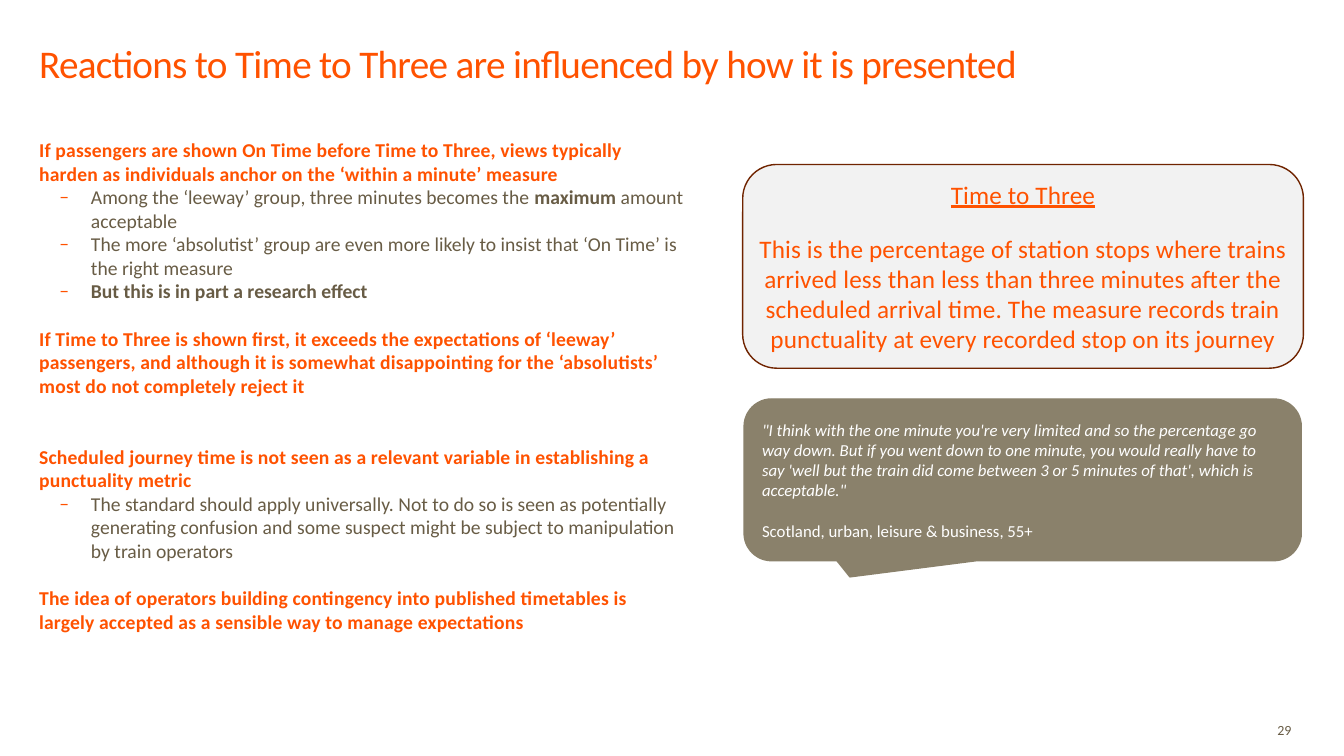
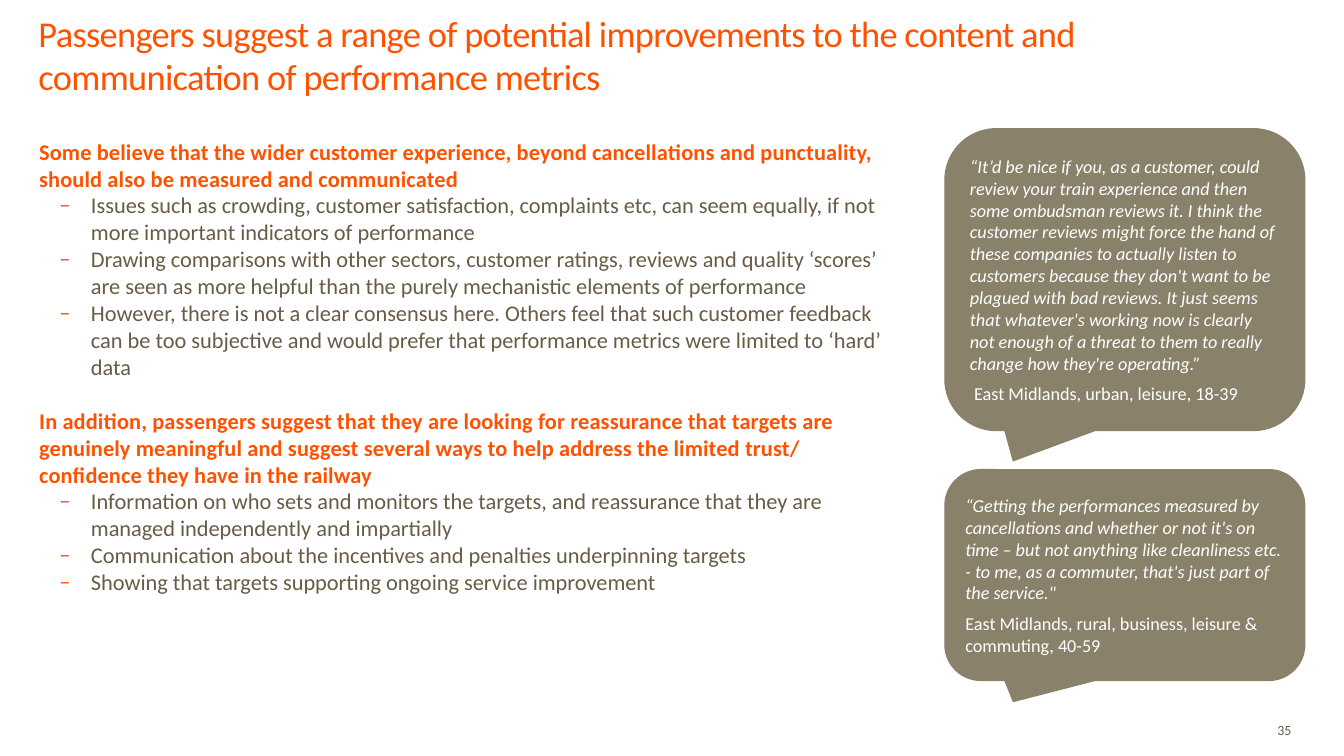
from pptx import Presentation
from pptx.dml.color import RGBColor
from pptx.enum.shapes import MSO_SHAPE
from pptx.enum.text import MSO_ANCHOR, MSO_AUTO_SIZE, PP_ALIGN
from pptx.oxml.ns import qn
from pptx.util import Pt
from lxml import etree

# Shared colours, enum members and text formats
ORANGE = RGBColor(0xFF, 0x52, 0x00)
BROWN = RGBColor(0x68, 0x5C, 0x45)
RUST = RGBColor(0x70, 0x24, 0x00)
OLIVE = RGBColor(0x8A, 0x81, 0x6B)
PALE = RGBColor(0xF2, 0xF2, 0xF2)
WHITE = RGBColor(0xFF, 0xFF, 0xFF)

ROUND = MSO_SHAPE.ROUNDED_RECTANGLE
BUBBLE = MSO_SHAPE.ROUNDED_RECTANGULAR_CALLOUT
LEFT, CENTER, RIGHT = PP_ALIGN.LEFT, PP_ALIGN.CENTER, PP_ALIGN.RIGHT
TOP, MIDDLE, BOTTOM = MSO_ANCHOR.TOP, MSO_ANCHOR.MIDDLE, MSO_ANCHOR.BOTTOM
FIXED = MSO_AUTO_SIZE.NONE

FACE = "Calibri"
TITLE = {"color": ORANGE, "spc": -50}
HEAD = {"color": ORANGE, "bold": True, "spc": 10}
ITEM = {"color": BROWN}
STRONG = {"color": BROWN, "bold": True}
PAGE = {"color": BROWN, "size": Pt(10)}
NOTE = {"color": ORANGE, "size": Pt(18), "spc": 10}
QUOTE = {"color": WHITE, "italic": True}
SOURCE = {"color": WHITE}
TAIL = (-0.31, 0.6, 0.17)


def set_frame(frame, anchor, side=0, edge=0):
    values = {"word_wrap": True, "auto_size": FIXED, "vertical_anchor": anchor,
              "margin_left": Pt(side), "margin_right": Pt(side),
              "margin_top": Pt(edge), "margin_bottom": Pt(edge)}
    for name, value in values.items():
        setattr(frame, name, value)


def add_run(para, text, style, **more):
    run = para.add_run()
    run.text = text
    values = {"name": FACE, **style, **more}
    run.font.color.rgb = values.pop("color")
    spacing = values.pop("spc", 0)
    if spacing:
        run.font._element.set("spc", str(spacing))
    for name, value in values.items():
        setattr(run.font, name, value)


def next_para(frame, first, align=LEFT, gap=0):
    para = frame.paragraphs[0] if first else frame.add_paragraph()
    para.alignment = align
    if gap:
        para.space_before = Pt(gap)
    return para


def indent(para, left, hang=0):
    props = para._p.get_or_add_pPr()
    props.set("marL", str(Pt(left)))
    props.set("indent", str(Pt(hang)))
    return props


def add_dash(para):
    props = indent(para, 37, -22.5)
    color = etree.SubElement(props, qn("a:buClr"))
    etree.SubElement(color, qn("a:srgbClr")).set("val", str(ORANGE))
    etree.SubElement(props, qn("a:buFont")).set("typeface", FACE)
    etree.SubElement(props, qn("a:buChar")).set("char", "–")


# Title and page number, shared by both slides
def new_slide(deck, title, box, size, page, pitch=None):
    slide = deck.slides.add_slide(deck.slide_layouts[5])
    head = slide.shapes.title
    head.left, head.top, head.width, head.height = map(Pt, box)
    set_frame(head.text_frame, BOTTOM)
    para = next_para(head.text_frame, True)
    if pitch:
        para.line_spacing = Pt(pitch)
    add_run(para, title, TITLE, size=Pt(size))

    mark = slide.shapes.add_textbox(*map(Pt, (905, 513.5, 17.5, 16)))
    set_frame(mark.text_frame, MIDDLE)
    add_run(next_para(mark.text_frame, True, RIGHT), page, PAGE)
    return slide


# Left column: sections of a gap, a heading and dashed points
def add_body(slide, box, size, parts):
    frame = slide.shapes.add_textbox(*map(Pt, box)).text_frame
    set_frame(frame, TOP)
    for num, (gap, head, points) in enumerate(parts):
        para = next_para(frame, num == 0, gap=gap)
        add_run(para, head, HEAD, size=Pt(size))
        for runs in points:
            para = next_para(frame, False)
            add_dash(para)
            for text, style in runs:
                add_run(para, text, style, size=Pt(size))


def add_panel(slide, kind, box, fill, edge):
    shape = slide.shapes.add_shape(kind, *map(Pt, box))
    shape.shadow.inherit = False
    shape.fill.solid()
    shape.fill.fore_color.rgb = fill
    shape.line.color.rgb = edge
    shape.line.width = Pt(1)
    return shape


# Definition card
def add_card(slide, box, head, text):
    frame = add_panel(slide, ROUND, box, PALE, RUST).text_frame
    set_frame(frame, MIDDLE)
    add_run(next_para(frame, True, CENTER), head, NOTE, underline=True)
    add_run(next_para(frame, False, CENTER, 17), text, NOTE)


# Speech bubble with a quote and its speaker
def add_quote(slide, box, size, gap, quote, source, shift=0):
    shape = add_panel(slide, BUBBLE, box, OLIVE, OLIVE)
    for num, value in enumerate(TAIL):
        shape.adjustments[num] = value
    frame = shape.text_frame
    set_frame(frame, MIDDLE, 7.2, 3.6)
    add_run(next_para(frame, True), quote, QUOTE, size=Pt(size))
    para = next_para(frame, False, gap=gap)
    indent(para, shift)
    add_run(para, source, SOURCE, size=Pt(size))


def add_timing(deck):
    slide = new_slide(
        deck, "Reactions to Time to Three are influenced by how it is presented",
        (28, 27.5, 903, 34), 28, "29", 29)
    add_body(slide, (28, 98.5, 462, 392), 14, [
        (0, "If passengers are shown On Time before Time to Three, views typically "
            "harden as individuals anchor on the ‘within a minute’ measure", [
                [("Among the ‘leeway’ group, three minutes becomes the ", ITEM),
                 ("maximum", STRONG), (" amount acceptable", ITEM)],
                [("The more ‘absolutist’ group are even more likely to insist that "
                  "‘On Time’ is the right measure", ITEM)],
                [("But this is in part a research effect", STRONG)]]),
        (17, "If Time to Three is shown first, it exceeds the expectations of "
             "‘leeway’ passengers, and although it is somewhat disappointing for "
             "the ‘absolutists’ most do not completely reject it", []),
        (34, "Scheduled journey time is not seen as a relevant variable in "
             "establishing a punctuality metric", [
                 [("The standard should apply universally. Not to do so is seen as "
                   "potentially generating confusion and some suspect might be "
                   "subject to manipulation by train operators", ITEM)]]),
        (17, "The idea of operators building contingency into published timetables "
             "is largely accepted as a sensible way to manage expectations", [])])
    add_card(slide, (530.5, 117.5, 400.5, 145.5), "Time to Three",
             "This is the percentage of station stops where trains arrived less "
             "than less than three minutes after the scheduled arrival time. The "
             "measure records train punctuality at every recorded stop on its "
             "journey")
    add_quote(slide, (531.5, 285, 398, 115.5), 12, 14.5,
              "\"I think with the one minute you're very limited and so the "
              "percentage go way down. But if you went down to one minute, you "
              "would really have to say 'well but the train did come between 3 or "
              "5 minutes of that', which is acceptable.\"",
              "Scotland, urban, leisure & business, 55+")


def add_ideas(deck):
    slide = new_slide(
        deck, "Passengers suggest a range of potential improvements to the content "
        "and communication of performance metrics",
        (27.5, 28, 894, 42), 26, "35")
    add_body(slide, (28, 98.5, 609, 332), 16, [
        (0, "Some believe that the wider customer experience, beyond cancellations "
            "and punctuality, should also be measured and communicated", [
                [("Issues such as crowding, customer satisfaction, complaints etc, "
                  "can seem equally, if not more important indicators of "
                  "performance", ITEM)],
                [("Drawing comparisons with other sectors, customer ratings, "
                  "reviews and quality ‘scores’ are seen as more helpful than the "
                  "purely mechanistic elements of performance", ITEM)],
                [("However, there is not a clear consensus here. Others feel that "
                  "such customer feedback can be too subjective and would prefer "
                  "that performance metrics were limited to ‘hard’ data", ITEM)]]),
        (19.5, "In addition, passengers suggest that they are looking for "
               "reassurance that targets are genuinely meaningful and suggest "
               "several ways to help address the limited trust/ confidence they "
               "have in the railway", [
                   [("Information on who sets and monitors the targets, and "
                     "reassurance that they are managed independently and "
                     "impartially", ITEM)],
                   [("Communication about the incentives and penalties "
                     "underpinning targets", ITEM)],
                   [("Showing that targets supporting ongoing service "
                     "improvement", ITEM)]])])
    add_quote(slide, (675, 92, 257, 215.5), 13, 6,
              "“It’d be nice if you, as a customer, could review your train "
              "experience and then some ombudsman reviews it. I think the customer "
              "reviews might force the hand of these companies to actually listen "
              "to customers because they don't want to be plagued with bad "
              "reviews. It just seems that whatever's working now is clearly not "
              "enough of a threat to them to really change how they're operating.”",
              "East Midlands, urban, leisure, 18-39", 3)
    add_quote(slide, (675, 335.5, 257, 150.5), 13, 6,
              "“Getting the performances measured by cancellations and whether or "
              "not it's on time – but not anything like cleanliness etc. - to me, "
              "as a commuter, that's just part of the service.\"",
              "East Midlands, rural, business, leisure & commuting, 40-59")


def main():
    deck = Presentation()
    deck.slide_width, deck.slide_height = Pt(960), Pt(540)
    add_timing(deck)
    add_ideas(deck)
    deck.save("out.pptx")


if __name__ == "__main__":
    main()
